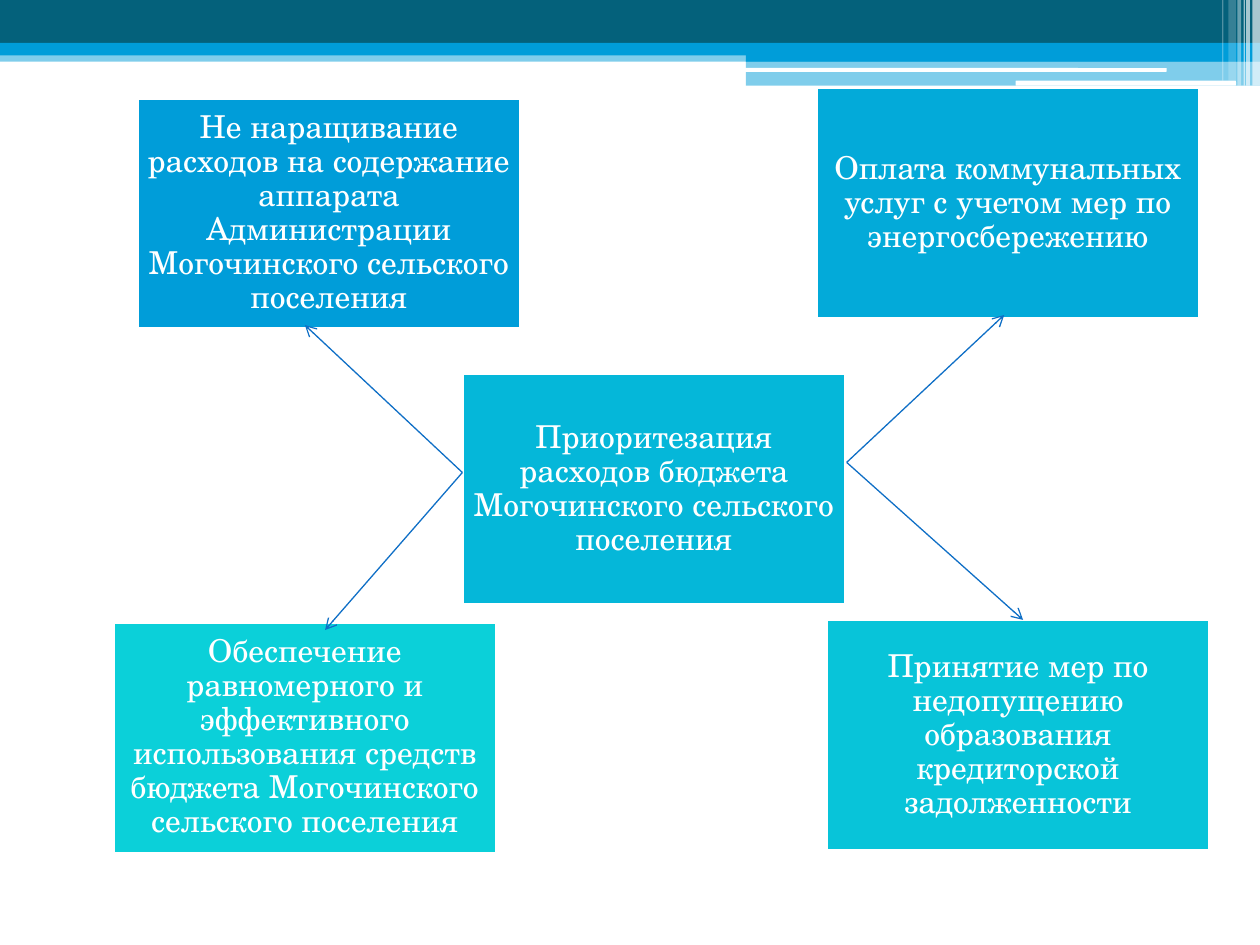
from typing import NamedTuple

import lxml.etree
import pptx
import pptx.dml.color
import pptx.enum.shapes
import pptx.enum.text
import pptx.oxml.ns
import pptx.util

Inches = pptx.util.Inches
Pt = pptx.util.Pt
Kind = pptx.enum.shapes.MSO_SHAPE
qn = pptx.oxml.ns.qn

FONT = "TeX Gyre Schola"
COLORS = {
    "white": "FFFFFF",
    "teal": "04617B",
    "blue": "009DD9",
    "arrow": "0F6FC6",
    "staff": "009DD9",
    "power": "03AAD9",
    "center": "05B7D9",
    "debt": "08C4D9",
    "funds": "0BD0D9",
}
CARD_W, CARD_H = 3.04, 1.83


class Band(NamedTuple):
    left: float
    top: float
    width: float
    height: float
    color: str
    alpha: int = 100
    kind: int = Kind.RECTANGLE


class Card(NamedTuple):
    left: float
    top: float
    color: str
    text: str


class Arrow(NamedTuple):
    start: tuple[float, float]
    end: tuple[float, float]


BANDS = [
    Band(0, 0.4, 10, 0.09, "blue", 50),
    Band(0, 0, 10, 0.34, "teal"),
    Band(0, 0.34, 10, 0.1, "blue"),
    Band(5.92, 0.39, 4.08, 0.1, "blue"),
    Band(5.92, 0.48, 4.08, 0.2, "blue", 50),
    Band(5.91, 0.54, 3.35, 0.03, "white", kind=Kind.ROUNDED_RECTANGLE),
    Band(8.06, 0.64, 1.75, 0.04, "white", kind=Kind.ROUNDED_RECTANGLE),
    Band(9.94, 0, 0.06, 0.68, "white", 65),
    Band(9.89, 0, 0.03, 0.68, "white", 65),
    Band(9.87, 0, 0.01, 0.68, "white", 60),
    Band(9.82, 0, 0.03, 0.68, "white", 40),
    Band(9.75, 0, 0.06, 0.64, "white", 20),
    Band(9.7, 0, 0.01, 0.64, "white", 30),
]

CARDS = [
    Card(1.09, 0.78, "staff", "Не наращивание расходов на содержание аппарата "
         "Администрации Могочинского сельского поселения"),
    Card(6.48, 0.7, "power",
         "Оплата коммунальных услуг с учетом мер по энергосбережению"),
    Card(3.67, 2.97, "center",
         "Приоритезация расходов бюджета Могочинского сельского поселения"),
    Card(6.56, 4.92, "debt",
         "Принятие мер по недопущению образования кредиторской задолженности"),
    Card(0.9, 4.94, "funds", "Обеспечение равномерного и эффективного "
         "использования средств бюджета Могочинского сельского поселения"),
]

LEFT_HUB = (3.67, 3.75)
RIGHT_HUB = (6.72, 3.67)
ARROWS = [
    Arrow(LEFT_HUB, (2.58, 5)),
    Arrow(LEFT_HUB, (2.42, 2.58)),
    Arrow(RIGHT_HUB, (7.97, 2.5)),
    Arrow(RIGHT_HUB, (8.12, 4.92)),
]


def get_rgb(name: str) -> pptx.dml.color.RGBColor:
    return pptx.dml.color.RGBColor.from_string(COLORS[name])


def add_box(slide, kind, left, top, width, height, color):
    box = slide.shapes.add_shape(
        kind, Inches(left), Inches(top), Inches(width), Inches(height))
    box.shadow.inherit = False
    box.fill.solid()
    box.fill.fore_color.rgb = get_rgb(color)
    return box


def draw_band(slide, band: Band) -> None:
    box = add_box(slide, band.kind, band.left, band.top,
                  band.width, band.height, band.color)
    box.line.fill.background()
    if band.alpha < 100:
        tint = box.fill._xPr.find(".//" + qn("a:srgbClr"))
        lxml.etree.SubElement(tint, qn("a:alpha"), val=str(band.alpha * 1000))


def draw_card(slide, card: Card) -> None:
    box = add_box(slide, Kind.RECTANGLE, card.left, card.top,
                  CARD_W, CARD_H, card.color)
    box.line.color.rgb = get_rgb("white")
    box.line.width = Pt(1.5)
    frame = box.text_frame
    frame.word_wrap = True
    frame.vertical_anchor = pptx.enum.text.MSO_ANCHOR.MIDDLE
    frame.margin_left = frame.margin_right = Inches(0.07)
    frame.margin_top = frame.margin_bottom = Inches(0.07)
    para = frame.paragraphs[0]
    para.text = card.text
    para.alignment = pptx.enum.text.PP_ALIGN.CENTER
    para.line_spacing = 0.9
    para.font.name = FONT
    para.font.size = Pt(18)
    para.font.color.rgb = get_rgb("white")


def draw_arrow(slide, arrow: Arrow) -> None:
    ends = [Inches(value) for value in arrow.start + arrow.end]
    line = slide.shapes.add_connector(
        pptx.enum.shapes.MSO_CONNECTOR.STRAIGHT, *ends)
    line.line.color.rgb = get_rgb("arrow")
    line.line.width = Pt(0.75)
    props = line._element.spPr
    lxml.etree.SubElement(props.find(qn("a:ln")), qn("a:tailEnd"), type="arrow")
    lxml.etree.SubElement(props, qn("a:effectLst"))


def main() -> None:
    deck = pptx.Presentation()
    deck.slide_width, deck.slide_height = Inches(10), Inches(7.5)
    slide = deck.slides.add_slide(deck.slide_layouts[6])
    for band in BANDS:
        draw_band(slide, band)
    for card in CARDS:
        draw_card(slide, card)
    for arrow in ARROWS:
        draw_arrow(slide, arrow)
    deck.save("out.pptx")


if __name__ == "__main__":
    main()
